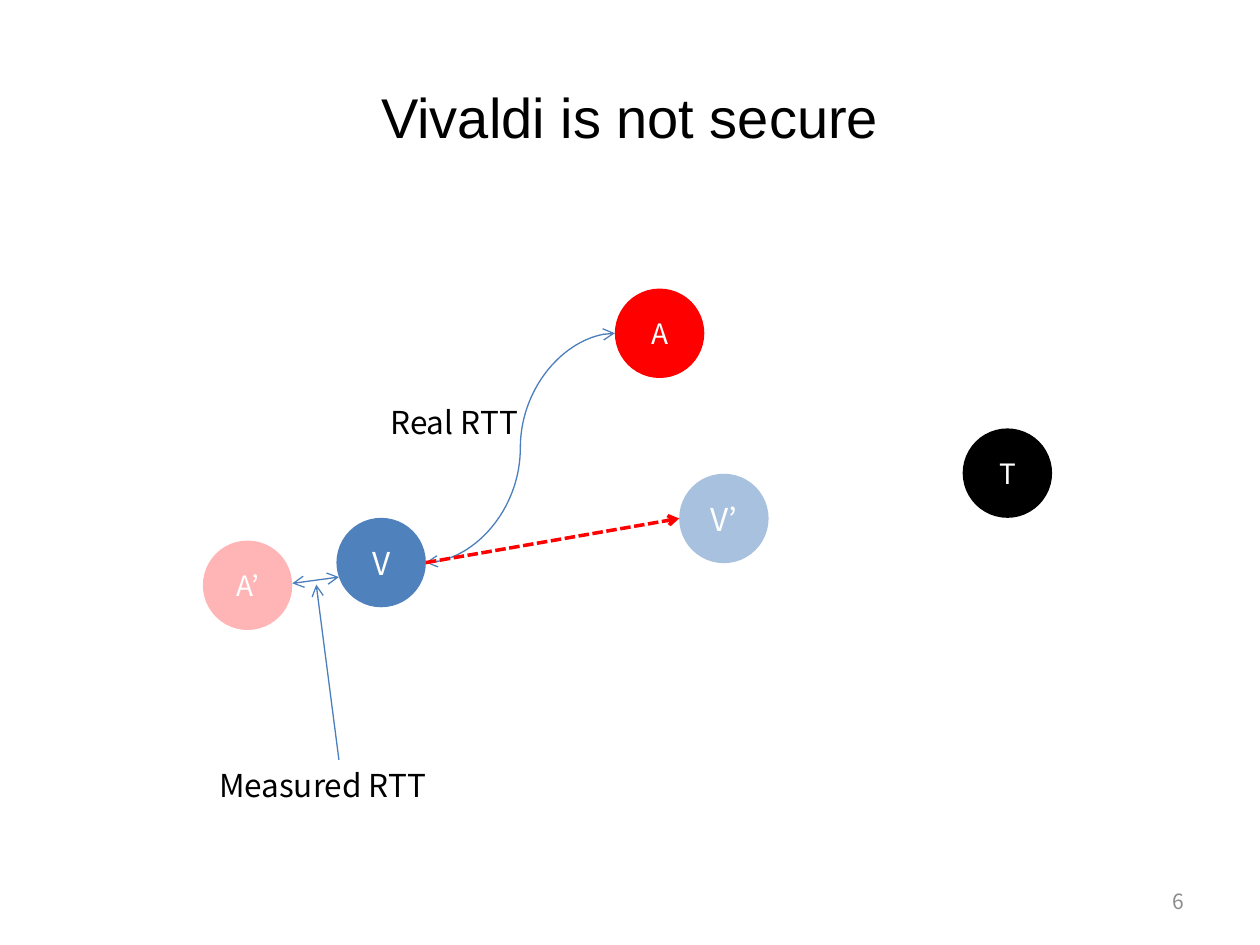
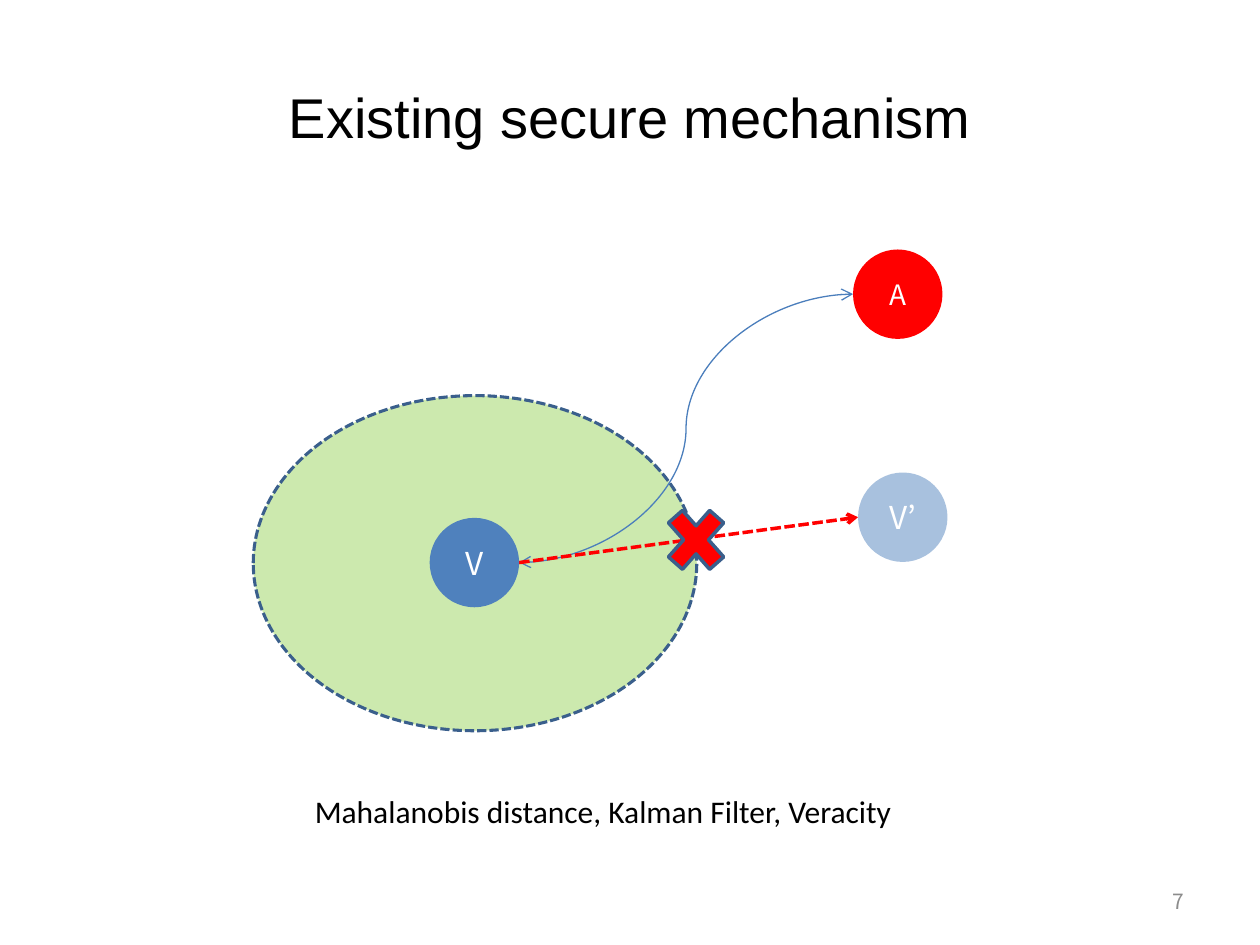
from pptx import Presentation
from pptx.dml.color import RGBColor as Rgb
from pptx.enum.dml import MSO_LINE as Dash
from pptx.enum.shapes import MSO_CONNECTOR as Conn, MSO_SHAPE as Form
from pptx.enum.text import MSO_ANCHOR as Anchor, MSO_AUTO_SIZE as Auto, PP_ALIGN as Align
from pptx.oxml.ns import qn
from pptx.util import Pt
from lxml.etree import SubElement as Sub

PX = 9144
SIZE = 71
BLUE, RED, GREEN = "4F81BD", "FF0000", "92D050"
EDGE, THIN = "3A5F8C", "4B7EBC"
BLACK, WHITE, GRAY = "000000", "FFFFFF", "8C8C8C"
SANS = "Noto Sans CJK KR"
THIN_LINE = {"hue": THIN, "width": 0.75}
PUSH_LINE = {"hue": RED, "width": 2, "dash": Dash.SQUARE_DOT}
BOTH = ("headEnd", "tailEnd")
NODES = {
    "A": {"fill": RED, "size": 16},
    "T": {"fill": BLACK, "size": 16},
    "V": {"fill": BLUE, "size": 18},
    "V’": {"fill": BLUE, "size": 18, "alpha": 49},
    "A’": {"fill": RED, "size": 16, "alpha": 29},
}


def emu(*nums):
    return [round(n * PX) for n in nums]


def color(text):
    return Rgb.from_string(text)


def apply(item, form):
    for key, val in form.items():
        setattr(item, key, val)


def write(shape, text, size, hue, font=SANS, align=Align.CENTER, **frame):
    apply(shape.text_frame, {"word_wrap": True, "vertical_anchor": Anchor.MIDDLE, **frame})
    par = shape.text_frame.paragraphs[0]
    par.alignment = align
    run = par.add_run()
    run.text = text
    apply(run.font, {"size": Pt(size), "name": font})
    run.font.color.rgb = color(hue)


def label(slide, box, text, size=18, hue=BLACK, **form):
    write(slide.shapes.add_textbox(*emu(*box)), text, size, hue, **form)


def note(slide, box, text, font=SANS):
    label(slide, box, text, font=font, align=Align.LEFT,
          vertical_anchor=Anchor.TOP, auto_size=Auto.SHAPE_TO_FIT_TEXT)


def stroke(line, hue, width, dash=None):
    line.color.rgb = color(hue)
    line.width = Pt(width)
    if dash:
        line.dash_style = dash


def solid(slide, form, box, fill, alpha=100, line=None):
    shape = slide.shapes.add_shape(form, *emu(*box))
    shape.shadow.inherit = False
    shape.fill.solid()
    shape.fill.fore_color.rgb = color(fill)
    if alpha < 100:
        tint = shape.element.spPr.find(qn("a:solidFill"))[0]
        Sub(tint, qn("a:alpha"), val=str(alpha * 1000))
    if line:
        stroke(shape.line, **line)
    else:
        shape.line.fill.background()
    return shape


def node(slide, name, spot):
    look = dict(NODES[name])
    size = look.pop("size")
    disc = solid(slide, Form.OVAL, (*spot, SIZE, SIZE), **look)
    write(disc, name, size, WHITE)


def arrow(slide, start, end, look, ends=("tailEnd",), kind=Conn.STRAIGHT):
    link = slide.shapes.add_connector(kind, *emu(*start, *end))
    stroke(link.line, **look)
    props = link.element.spPr
    for tip in ends:
        Sub(props.find(qn("a:ln")), qn(f"a:{tip}"), type="arrow")
    Sub(props, qn("a:effectLst"))


def left(spot):
    return spot[0], spot[1] + SIZE / 2


def right(spot):
    return spot[0] + SIZE, spot[1] + SIZE / 2


def attack(slide, spots):
    start = right(spots["V"])
    arrow(slide, start, left(spots["A"]), THIN_LINE, BOTH, Conn.CURVE)
    arrow(slide, start, left(spots["V’"]), PUSH_LINE)
    for name, spot in spots.items():
        node(slide, name, spot)


def start_slide(deck, title, number):
    slide = deck.slides.add_slide(deck.slide_layouts[6])
    label(slide, (50, 30, 900, 125), title, 32, font="Arial")
    label(slide, (717, 695, 233, 40), str(number), 12, GRAY, align=Align.RIGHT)
    return slide


def threat(deck):
    slide = start_slide(deck, "Vivaldi is not secure", 6)
    attack(slide, {"A": (488, 229), "T": (764, 340), "V": (267, 411),
                   "V’": (539, 376), "A’": (161, 429)})
    note(slide, (300, 315, 125, 40), "Real RTT")
    arrow(slide, (232, 463), (269, 458), THIN_LINE, BOTH)
    note(slide, (164, 603, 210, 40), "Measured RTT")
    arrow(slide, (269, 603), (251, 464), THIN_LINE)


def defense(deck):
    slide = start_slide(deck, "Existing secure mechanism", 7)
    solid(slide, Form.OVAL, (201, 314, 352, 266), GREEN, 46,
          {"hue": EDGE, "width": 1.75, "dash": Dash.SQUARE_DOT})
    attack(slide, {"A": (677, 198), "V": (341, 411), "V’": (681, 375)})
    solid(slide, Form.MATH_MULTIPLY, (521, 393, 63, 71), RED, line={"hue": EDGE, "width": 2})
    note(slide, (240, 624, 500, 40), "Mahalanobis distance, Kalman Filter, Veracity", "Calibri")


def main():
    deck = Presentation()
    deck.slide_width, deck.slide_height = emu(1000, 750)
    threat(deck)
    defense(deck)
    deck.save("out.pptx")


if __name__ == "__main__":
    main()
